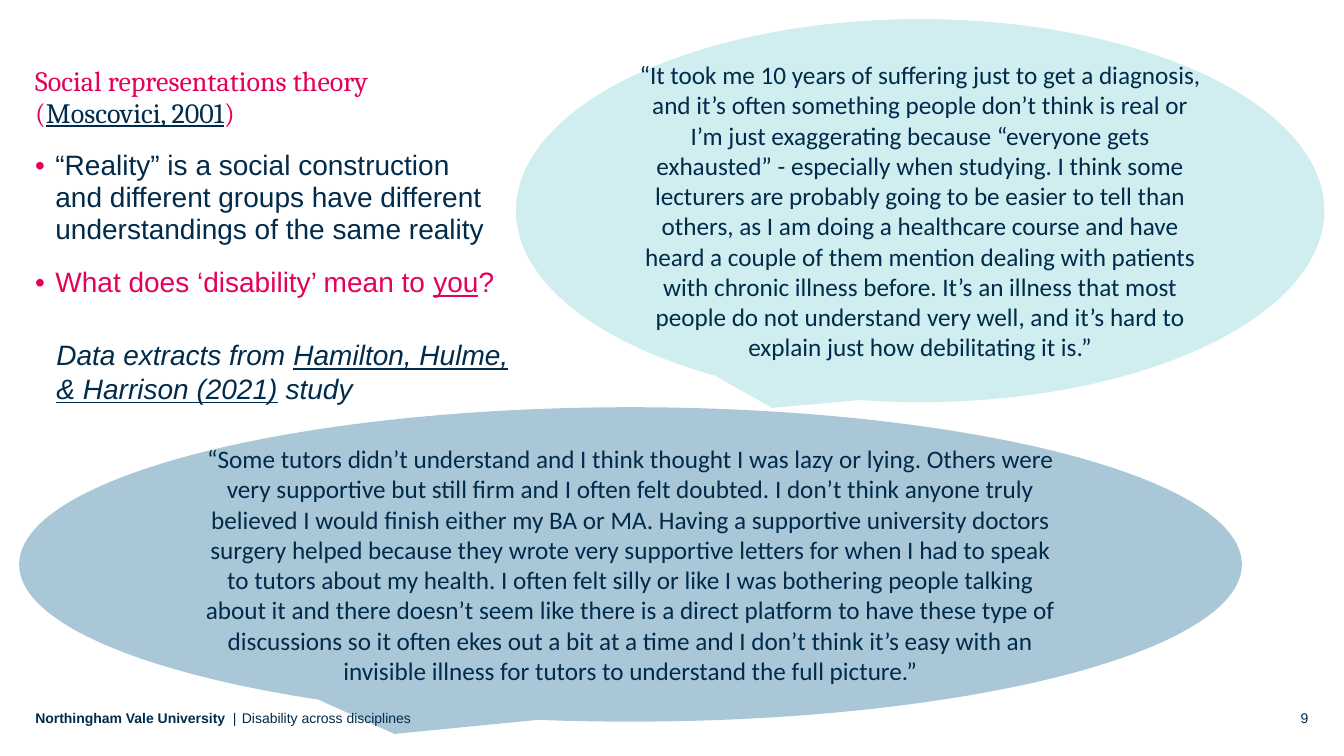
import pptx
import pptx.dml.color
import pptx.enum.shapes
import pptx.enum.text
import pptx.oxml
import pptx.oxml.ns
import pptx.util
from lxml import etree

Pt = pptx.util.Pt
qn = pptx.oxml.ns.qn
ALIGN = pptx.enum.text.PP_ALIGN
COLOURS = {"navy": "002B4B", "pink": "E5005B", "blue": "AAC7D8", "aqua": "C1E7EB"}


def add_runs(paragraph, runs, size, font_name):
    """Add (text, colour name, style letters) runs; styles are b, i and u."""
    for text, colour, styles in runs:
        run = paragraph.add_run()
        run.text = text
        font = run.font
        font.name = font_name
        font.size = Pt(size)
        font.color.rgb = pptx.dml.color.RGBColor.from_string(COLOURS[colour])
        font.bold = "b" in styles
        font.italic = "i" in styles
        font.underline = "u" in styles


def add_text_box(left, top, width, height):
    frame = slide.shapes.add_textbox(Pt(left), Pt(top), Pt(width), Pt(height)).text_frame
    frame.word_wrap = True
    frame.margin_left = frame.margin_top = frame.margin_right = frame.margin_bottom = 0
    return frame


presentation = pptx.Presentation()
presentation.slide_width = Pt(960)
presentation.slide_height = Pt(540)
slide = presentation.slides.add_slide(presentation.slide_layouts[6])

# Speech bubbles: position, tail, fill, opacity in percent, quote
bubbles = [
    ((13.7, 290.9, 873.4, 224.6), (-0.193, 0.539), "blue", 100,
     "“Some tutors didn’t understand and I think thought I was lazy or lying. Others were "
     "very supportive but still firm and I often felt doubted. I don’t think anyone truly "
     "believed I would finish either my BA or MA. Having a supportive university doctors "
     "surgery helped because they wrote very supportive letters for when I had to speak "
     "to tutors about my health. I often felt silly or like I was bothering people talking "
     "about it and there doesn’t seem like there is a direct platform to have these type of "
     "discussions so it often ekes out a bit at a time and I don’t think it’s easy with an "
     "invisible illness for tutors to understand the full picture.”"),
    ((368.6, 13.7, 577.4, 273.6), (-0.183, 0.515), "aqua", 75,
     "“It took me 10 years of suffering just to get a diagnosis, and it’s often something "
     "people don’t think is real or I’m just exaggerating because “everyone gets "
     "exhausted” - especially when studying. I think some lecturers are probably going to "
     "be easier to tell than others, as I am doing a healthcare course and have heard a "
     "couple of them mention dealing with patients with chronic illness before. It’s an "
     "illness that most people do not understand very well, and it’s hard to explain just "
     "how debilitating it is.”"),
]
for position, tail, colour, opacity, quote in bubbles:
    bubble = slide.shapes.add_shape(
        pptx.enum.shapes.MSO_SHAPE.OVAL_CALLOUT, *[Pt(length) for length in position])
    bubble.adjustments[0], bubble.adjustments[1] = tail
    bubble.shadow.inherit = False
    bubble.line.fill.background()
    bubble.fill.solid()
    bubble.fill.fore_color.rgb = pptx.dml.color.RGBColor.from_string(COLOURS[colour])
    if opacity < 100:
        fill_colour = bubble.fill._xPr.find(qn("a:solidFill"))[0]
        etree.SubElement(fill_colour, qn("a:alpha"), val=str(opacity * 1000))
    frame = bubble.text_frame
    frame.word_wrap = True
    frame.vertical_anchor = pptx.enum.text.MSO_ANCHOR.MIDDLE
    frame.margin_left = frame.margin_top = frame.margin_right = frame.margin_bottom = Pt(2.9)
    frame.paragraphs[0].alignment = ALIGN.CENTER
    add_runs(frame.paragraphs[0], [(quote, "navy", "")], 18, "Calibri")

# Heading and bullets: font, bulleted, runs
theory_paragraphs = [
    ("Cambria", False, [("Social representations theory (", "pink", ""),
                        ("Moscovici, 2001", "navy", "u"), (")", "pink", "")]),
    ("Arial", True, [("“Reality” is a social construction and different groups have "
                      "different understandings of the same reality", "navy", "")]),
    ("Arial", True, [("What does ‘disability’ mean to ", "pink", ""),
                     ("you", "pink", "u"), ("?", "pink", "")]),
]
theory = add_text_box(25.2, 46.8, 328.3, 198)
for index, (font_name, bulleted, runs) in enumerate(theory_paragraphs):
    paragraph = theory.add_paragraph() if index else theory.paragraphs[0]
    paragraph.line_spacing = 0.95
    paragraph.space_before = Pt(5)
    paragraph.space_after = Pt(10)
    if bulleted:
        properties = paragraph._p.get_or_add_pPr()
        properties.set("marL", str(Pt(14.4)))
        properties.set("indent", str(-Pt(14.4)))
        bullet_colour = etree.SubElement(properties, qn("a:buClr"))
        etree.SubElement(bullet_colour, qn("a:srgbClr"), val=COLOURS["pink"])
        etree.SubElement(properties, qn("a:buFont"), typeface="Arial")
        etree.SubElement(properties, qn("a:buChar"), char="•")
    add_runs(paragraph, runs, 20, font_name)

# Data source and footer: position, size, alignment, runs
notes = [
    ((40.3, 241.2, 328.3, 42.5), 20, ALIGN.LEFT,
     [("Data extracts from ", "navy", "i"),
      ("Hamilton, Hulme, & Harrison (2021)", "navy", "iu"), (" study", "navy", "i")]),
    ((25.2, 506.9, 146, 17.3), 10, ALIGN.LEFT,
     [("Northingham Vale University ", "navy", "b"), (" |", "navy", "")]),
    ((172.8, 506.9, 277.9, 17.3), 10, ALIGN.LEFT,
     [("Disability across disciplines", "navy", "")]),
    ((864, 506.9, 70.6, 20.2), 10, ALIGN.RIGHT, [("9", "navy", "")]),
]
for position, size, alignment, runs in notes:
    paragraph = add_text_box(*position).paragraphs[0]
    paragraph.alignment = alignment
    add_runs(paragraph, runs, size, "Arial")

presentation.save("out.pptx")
